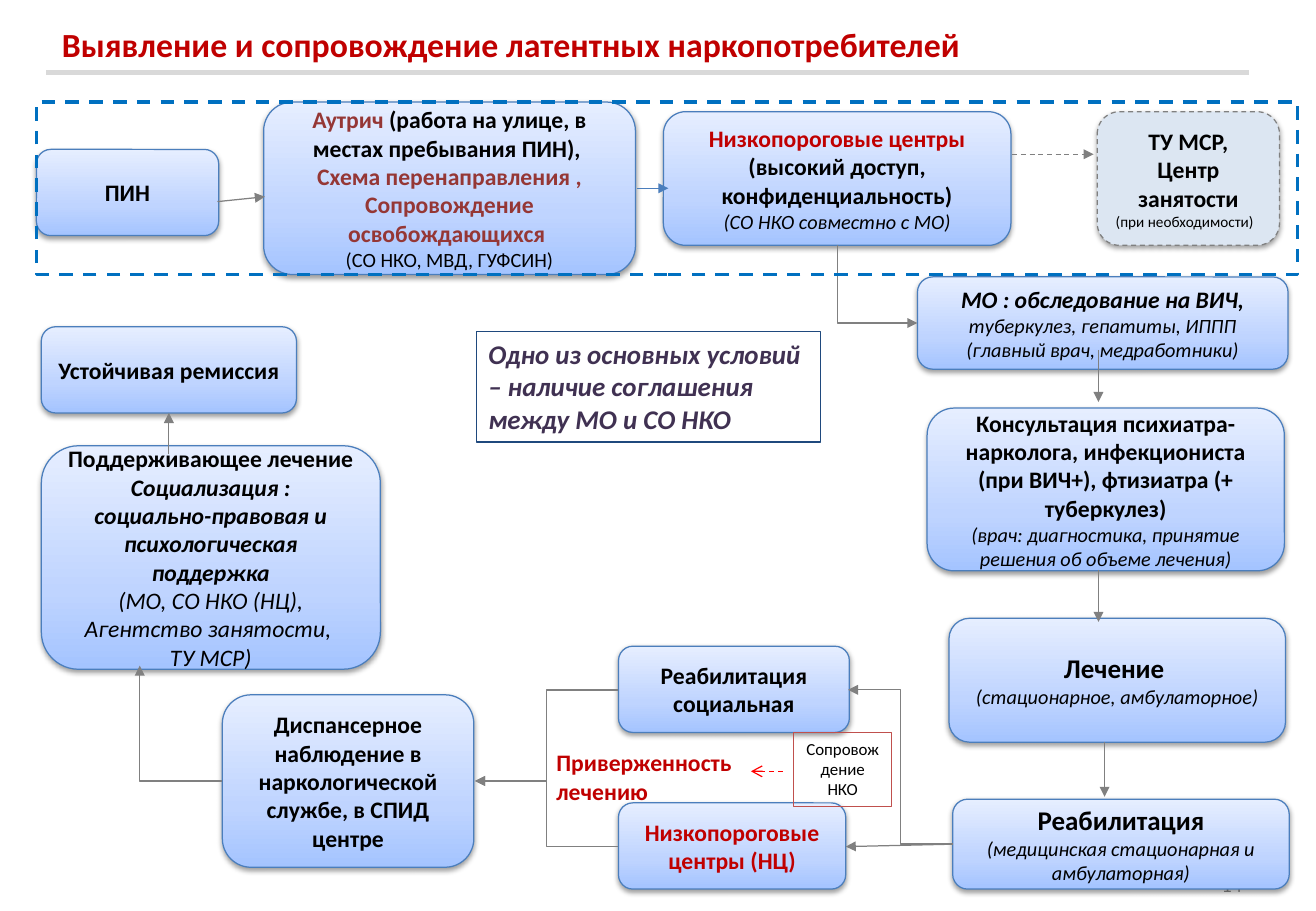
"""Builds the slide on finding and accompanying latent drug users."""
from dataclasses import dataclass
from typing import Optional

from pptx import Presentation
from pptx import util as u
from pptx.dml.color import RGBColor
from pptx.enum import dml, shapes, text
from pptx.oxml import parse_xml
from pptx.oxml.ns import nsdecls, qn

PX = 9144
FONT = "Calibri"
BLACK = RGBColor(0, 0, 0)
RED = RGBColor(0xC0, 0, 0)
BRICK = RGBColor(0x95, 0x37, 0x35)
PLUM = RGBColor(0x40, 0x31, 0x52)
GREY = RGBColor(0x80, 0x80, 0x80)
NUMBER_GREY = RGBColor(0x8C, 0x8C, 0x8C)
RULE_GREY = RGBColor(0xD9, 0xD9, 0xD9)
BLUE = RGBColor(0x4B, 0x7E, 0xBC)
FRAME_BLUE = RGBColor(0, 0x70, 0xC0)
NAVY = RGBColor(0x1F, 0x49, 0x7D)
CORAL = RGBColor(0xC0, 0x50, 0x4D)
BRIGHT_RED = RGBColor(0xFF, 0, 0)
PALE = RGBColor(0xDC, 0xE6, 0xF2)
GRADIENT = ((0, RGBColor(0xA4, 0xC4, 0xFF)), (35, RGBColor(0xBF, 0xD4, 0xFF)),
            (100, RGBColor(0xE6, 0xEE, 0xFF)))
LEFT, CENTER, RIGHT, JUSTIFY = (text.PP_ALIGN.LEFT, text.PP_ALIGN.CENTER,
                                text.PP_ALIGN.RIGHT, text.PP_ALIGN.JUSTIFY)
STRAIGHT, ELBOW = shapes.MSO_CONNECTOR.STRAIGHT, shapes.MSO_CONNECTOR.ELBOW


@dataclass
class Run:
    words: str
    size: int = 14
    color: RGBColor = BLACK
    bold: bool = True
    italic: bool = False


@dataclass
class Para:
    runs: list[Run]
    align: text.PP_ALIGN = CENTER


@dataclass
class Box:
    at: tuple[int, int, int, int]
    paras: list[Para]
    line: Optional[RGBColor] = BLUE
    width: float = 0.75
    dashed: bool = False
    fill: Optional[RGBColor] = None


@dataclass
class Arrow:
    start: tuple[int, int]
    end: tuple[int, int]
    kind: shapes.MSO_CONNECTOR = STRAIGHT
    corner: bool = False
    color: RGBColor = GREY
    width: float = 0.75
    dashed: bool = False
    head: str = ""
    tail: str = "triangle"


def bold(words: str, size: int = 14, color: RGBColor = BLACK) -> Para:
    return Para([Run(words, size, color)])


def note(words: str, size: int = 12) -> Para:
    return Para([Run(words, size, bold=False, italic=True)])


def strong(words: str) -> Para:
    return Para([Run(words, italic=True)])


STEPS = [
    Box((30, 123, 150, 71), [bold("ПИН")]),
    Box((217, 84, 306, 142), [
        Para([Run("Аутрич ", color=BRICK), Run("(работа на улице, в местах пребывания ПИН), ")]),
        bold("Схема перенаправления ,", color=BRICK),
        bold("Сопровождение освобождающихся ", color=BRICK),
        Para([Run("(СО НКО, МВД, ГУФСИН)", 12, bold=False)])]),
    Box((546, 92, 286, 110), [
        Para([Run("Низкопороговые центры ", color=RED),
              Run("(высокий доступ, конфиденциальность)")]),
        note("(СО НКО совместно с МО)")]),
    Box((903, 92, 150, 110), [
        bold("ТУ МСР,"), bold("Центр занятости"),
        Para([Run("(при необходимости)", 9, bold=False)], JUSTIFY)],
        line=GREY, dashed=True, fill=PALE),
    Box((755, 228, 305, 76), [
        Para([Run("МО : обследование на ВИЧ, ", italic=True),
              Run("туберкулез, гепатиты, ИППП", 12, bold=False, italic=True)]),
        note("(главный врач, медработники)")]),
    Box((763, 336, 294, 134), [
        bold("Консультация психиатра-нарколога, инфекциониста "
             "(при ВИЧ+), фтизиатра (+ туберкулез)"),
        note("(врач: диагностика, принятие решения об объеме лечения)")]),
    Box((781, 509, 277, 102), [bold("Лечение ", 16), note("(стационарное, амбулаторное)")]),
    Box((784, 658, 277, 74), [bold("Реабилитация", 16),
                              note("(медицинская стационарная и амбулаторная)")]),
    Box((509, 661, 187, 71), [bold("Низкопороговые центры (НЦ)", color=RED)]),
    Box((509, 532, 190, 71), [bold("Реабилитация социальная")]),
    Box((183, 572, 207, 142), [
        bold("Диспансерное наблюдение в наркологической службе, в СПИД центре")]),
    Box((34, 367, 279, 184), [
        bold("Поддерживающее лечение"), strong("Социализация :"),
        strong("социально-правовая и психологическая поддержка"),
        note("(МО, СО НКО (НЦ), Агентство занятости, ", 14), note("ТУ МСР)", 14)]),
    Box((34, 269, 210, 71), [bold("Устойчивая ремиссия ")]),
]

ARROWS = [
    Arrow((179, 166), (218, 162)),
    Arrow((833, 127), (900, 127), dashed=True),
    Arrow((755, 266), (689, 202), ELBOW, corner=True, head="triangle", tail=""),
    Arrow((904, 288), (904, 331)),
    Arrow((904, 469), (904, 512)),
    Arrow((909, 611), (909, 656)),
    Arrow((784, 695), (698, 568), ELBOW),
    Arrow((784, 695), (696, 697)),
    Arrow((509, 568), (391, 643), ELBOW),
    Arrow((509, 697), (391, 643), ELBOW),
    Arrow((183, 643), (115, 548), ELBOW, corner=True),
    Arrow((139, 374), (139, 340)),
    Arrow((644, 635), (618, 635), color=BRIGHT_RED, dashed=True, tail="arrow"),
    Arrow((524, 155), (550, 155), color=BLUE),
]

LABELS = [
    Box((448, 611, 188, 57), [Para([Run("Приверженность лечению", color=RED)], LEFT)], line=None),
    Box((30, 84, 1038, 142), [], line=FRAME_BLUE, width=2, dashed=True),
    Box((653, 603, 81, 61), [Para([Run("Сопровождение НКО", 10, bold=False)])], line=CORAL),
    Box((392, 273, 283, 91), [
        Para([Run("Одно из основных условий – наличие соглашения между МО и СО НКО",
                  16, PLUM, italic=True)], LEFT)], line=NAVY),
]


def write(tf, paras: list[Para]) -> None:
    tf.word_wrap = True
    for i, para in enumerate(paras):
        p = tf.add_paragraph() if i else tf.paragraphs[0]
        p.alignment = para.align
        for run in para.runs:
            r = p.add_run()
            r.text = run.words
            r.font.name, r.font.size = FONT, u.Pt(run.size)
            r.font.bold, r.font.italic = run.bold, run.italic
            r.font.color.rgb = run.color


def stroke(line, color: RGBColor, width: float, dashed: bool) -> None:
    line.color.rgb = color
    line.width = u.Pt(width)
    if dashed:
        line.dash_style = dml.MSO_LINE.DASH


def draw_box(s, box: Box, preset: shapes.MSO_SHAPE, anchor: text.MSO_ANCHOR):
    sp = s.shapes.add_shape(preset, *(v * PX for v in box.at))
    sp.shadow.inherit = False
    if box.fill is None:
        sp.fill.background()
    else:
        sp.fill.solid()
        sp.fill.fore_color.rgb = box.fill
    if box.line is None:
        sp.line.fill.background()
    else:
        stroke(sp.line, box.line, box.width, box.dashed)
    sp.text_frame.vertical_anchor = anchor
    write(sp.text_frame, box.paras)
    return sp


def draw_step(s, box: Box) -> None:
    sp = draw_box(s, box, shapes.MSO_SHAPE.ROUNDED_RECTANGLE, text.MSO_ANCHOR.MIDDLE)
    props = sp._element.spPr
    if box.fill is None:
        stops = "".join(f'<a:gs pos="{pos * 1000}"><a:srgbClr val="{color}"/></a:gs>'
                        for pos, color in GRADIENT)
        props.replace(props.find(qn("a:noFill")), parse_xml(
            f'<a:gradFill {nsdecls("a")} rotWithShape="1"><a:gsLst>{stops}</a:gsLst>'
            '<a:lin ang="16200000" scaled="0"/></a:gradFill>'))
    props.find(qn("a:effectLst")).append(parse_xml(
        f'<a:outerShdw {nsdecls("a")} blurRad="40000" dist="20000" dir="5400000" '
        'rotWithShape="0"><a:srgbClr val="000000"><a:alpha val="38000"/></a:srgbClr>'
        '</a:outerShdw>'))


def draw_arrow(s, arrow: Arrow) -> None:
    cxn = s.shapes.add_connector(arrow.kind, *(v * PX for v in arrow.start + arrow.end))
    stroke(cxn.line, arrow.color, arrow.width, arrow.dashed)
    props = cxn._element.spPr
    if arrow.corner:
        props.find(qn("a:prstGeom")).set("prst", "bentConnector2")
    for tag, kind in (("headEnd", arrow.head), ("tailEnd", arrow.tail)):
        if kind:
            props.find(qn("a:ln")).append(parse_xml(f'<a:{tag} {nsdecls("a")} type="{kind}"/>'))
    props.append(parse_xml(f'<a:effectLst {nsdecls("a")}/>'))


def main() -> None:
    prs = Presentation()
    prs.slide_width, prs.slide_height = 1083 * PX, 750 * PX
    s = prs.slides.add_slide(prs.slide_layouts[5])
    title = s.shapes.title
    title.left, title.top, title.width, title.height = (v * PX for v in (41, 13, 988, 47))
    title.text_frame.vertical_anchor = text.MSO_ANCHOR.MIDDLE
    write(title.text_frame, [Para([Run("Выявление и сопровождение латентных наркопотребителей",
                                       20, RED)], LEFT)])
    number = Box((788, 708, 244, 40), [Para([Run("14", 12, NUMBER_GREY, False)], RIGHT)], line=None)
    draw_box(s, number, shapes.MSO_SHAPE.RECTANGLE, text.MSO_ANCHOR.MIDDLE)
    draw_arrow(s, Arrow((38, 60), (1028, 60), color=RULE_GREY, width=3, tail=""))
    for step in STEPS:
        draw_step(s, step)
    for arrow in ARROWS:
        draw_arrow(s, arrow)
    for label in LABELS:
        draw_box(s, label, shapes.MSO_SHAPE.RECTANGLE, text.MSO_ANCHOR.TOP)
    prs.save("out.pptx")


if __name__ == "__main__":
    main()
